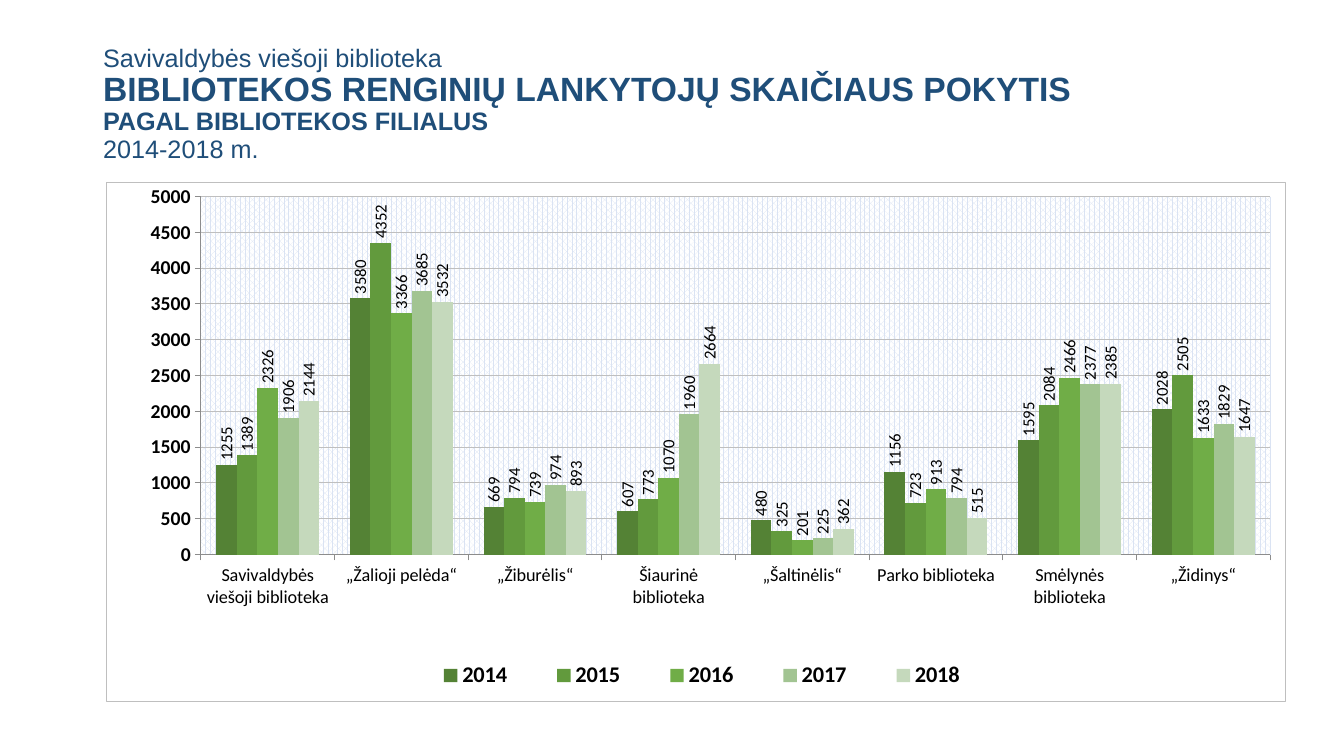
import copy
from lxml import etree
from pptx import Presentation
from pptx import util as u
from pptx.chart.data import CategoryChartData
from pptx.dml.color import RGBColor
from pptx.enum import chart as ch, text
from pptx.oxml import parse_xml
from pptx.oxml.ns import nsdecls, qn

PX = 914400 / 100.8
COLORS = {
    "title": "1F4E79", "text": "000000", "grid": "BFBFBF", "axis": "8C8C8C",
    "pattern": "DAE3F3", "back": "FFFFFF",
    "2014": "548235", "2015": "629A3D", "2016": "70AD47",
    "2017": "A2C492", "2018": "C5D9BC",
}


def set_font(font, color, **values):
    for name, value in values.items():
        setattr(font, name, value)
    font.color.rgb = RGBColor.from_string(COLORS[color])


def set_layout(parent, index, inner, **box):
    for old in parent.findall(qn("c:layout")):
        parent.remove(old)
    layout = parse_xml(f"<c:layout {nsdecls('c')}><c:manualLayout/></c:layout>")
    values = {"layoutTarget": "inner"} if inner else {}
    values.update(xMode="edge", yMode="edge", **box)
    for tag, value in values.items():
        etree.SubElement(layout[0], qn(f"c:{tag}")).set("val", str(value))
    parent.insert(index, layout)


prs = Presentation()
prs.slide_width, prs.slide_height = round(1344 * PX), round(756 * PX)
s = prs.slides.add_slide(prs.slide_layouts[5])

title = s.shapes.title
title.left, title.top, title.width, title.height = [round(v * PX) for v in (93, 40, 1159, 129)]
tf = title.text_frame
for name, value in {"word_wrap": True, "auto_size": text.MSO_AUTO_SIZE.NONE,
                    "vertical_anchor": text.MSO_ANCHOR.MIDDLE}.items():
    setattr(tf, name, value)
p = tf.paragraphs[0]
p.alignment = text.PP_ALIGN.LEFT
p.line_spacing = 0.9
lines = [
    ("Savivaldybės viešoji biblioteka", 18, False),
    ("BIBLIOTEKOS RENGINIŲ LANKYTOJŲ SKAIČIAUS POKYTIS", 24, True),
    ("PAGAL BIBLIOTEKOS FILIALUS", 18, True),
    ("2014-2018 m.", 18, False),
]
for i, (line, size, bold) in enumerate(lines):
    r = p.add_run()
    r.text = line
    set_font(r.font, "title", name="Arial", size=u.Pt(size), bold=bold)
    if i < len(lines) - 1:
        p.add_line_break()
        p._p[-1].append(copy.deepcopy(r._r.rPr))

visitors = {
    "2014": (1255, 3580, 669, 607, 480, 1156, 1595, 2028),
    "2015": (1389, 4352, 794, 773, 325, 723, 2084, 2505),
    "2016": (2326, 3366, 739, 1070, 201, 913, 2466, 1633),
    "2017": (1906, 3685, 974, 1960, 225, 794, 2377, 1829),
    "2018": (2144, 3532, 893, 2664, 362, 515, 2385, 1647),
}
data = CategoryChartData()
data.categories = [
    "Savivaldybės viešoji biblioteka", "„Žalioji pelėda“", "„Žiburėlis“",
    "Šiaurinė biblioteka", "„Šaltinėlis“", "Parko biblioteka",
    "Smėlynės biblioteka", "„Židinys“",
]
for year, values in visitors.items():
    data.add_series(year, values)
chart = s.shapes.add_chart(
    ch.XL_CHART_TYPE.COLUMN_CLUSTERED,
    *[round(v * PX) for v in (106, 182, 1180, 520)], data).chart
chart.has_title = False
set_font(chart.font, "text", name="Calibri", size=u.Pt(10))

plot = chart.plots[0]
for name, value in {"gap_width": 150, "overlap": 0, "vary_by_categories": False}.items():
    setattr(plot, name, value)
for series in plot.series:
    series.format.fill.solid()
    series.format.fill.fore_color.rgb = RGBColor.from_string(COLORS[series.name])
    labels = series.data_labels
    labels.show_value = True
    labels.position = ch.XL_LABEL_POSITION.OUTSIDE_END
    set_font(labels.font, "text", name="Calibri", size=u.Pt(12))
    body = labels._element.find(qn("c:txPr")).find(qn("a:bodyPr"))
    body.set("rot", "-5400000")
    body.set("vert", "horz")

for axis, size, bold in ((chart.category_axis, 13, False), (chart.value_axis, 14, True)):
    set_font(axis.tick_labels.font, "text", name="Calibri", size=u.Pt(size), bold=bold)
    axis.major_tick_mark = ch.XL_TICK_MARK.OUTSIDE
    axis.format.line.color.rgb = RGBColor.from_string(COLORS["axis"])
    axis.format.line.width = u.Pt(0.75)
for name, value in {"minimum_scale": 0, "maximum_scale": 5000, "major_unit": 500,
                    "has_major_gridlines": True}.items():
    setattr(chart.value_axis, name, value)
grid = chart.value_axis.major_gridlines.format.line
grid.color.rgb = RGBColor.from_string(COLORS["grid"])
grid.width = u.Pt(0.75)

chart.has_legend = True
legend = chart.legend
legend.position = ch.XL_LEGEND_POSITION.BOTTOM
legend.include_in_layout = False
set_font(legend.font, "text", name="Calibri", size=u.Pt(16), bold=True)
set_layout(legend._element, 1, False, x=0.25, y=0.91, w=0.51, h=0.08)

area = chart._chartSpace.chart.plotArea
set_layout(area, 0, True, x=0.08, y=0.027, w=0.907, h=0.69)
area.append(parse_xml(
    f'<c:spPr {nsdecls("c", "a")}><a:pattFill prst="pct70">'
    f'<a:fgClr><a:srgbClr val="{COLORS["pattern"]}"/></a:fgClr>'
    f'<a:bgClr><a:srgbClr val="{COLORS["back"]}"/></a:bgClr></a:pattFill></c:spPr>'))
chart._chartSpace.chart.addnext(parse_xml(
    f'<c:spPr {nsdecls("c", "a")}><a:noFill/><a:ln w="9525"><a:solidFill>'
    f'<a:srgbClr val="{COLORS["grid"]}"/></a:solidFill></a:ln></c:spPr>'))

prs.save("out.pptx")
